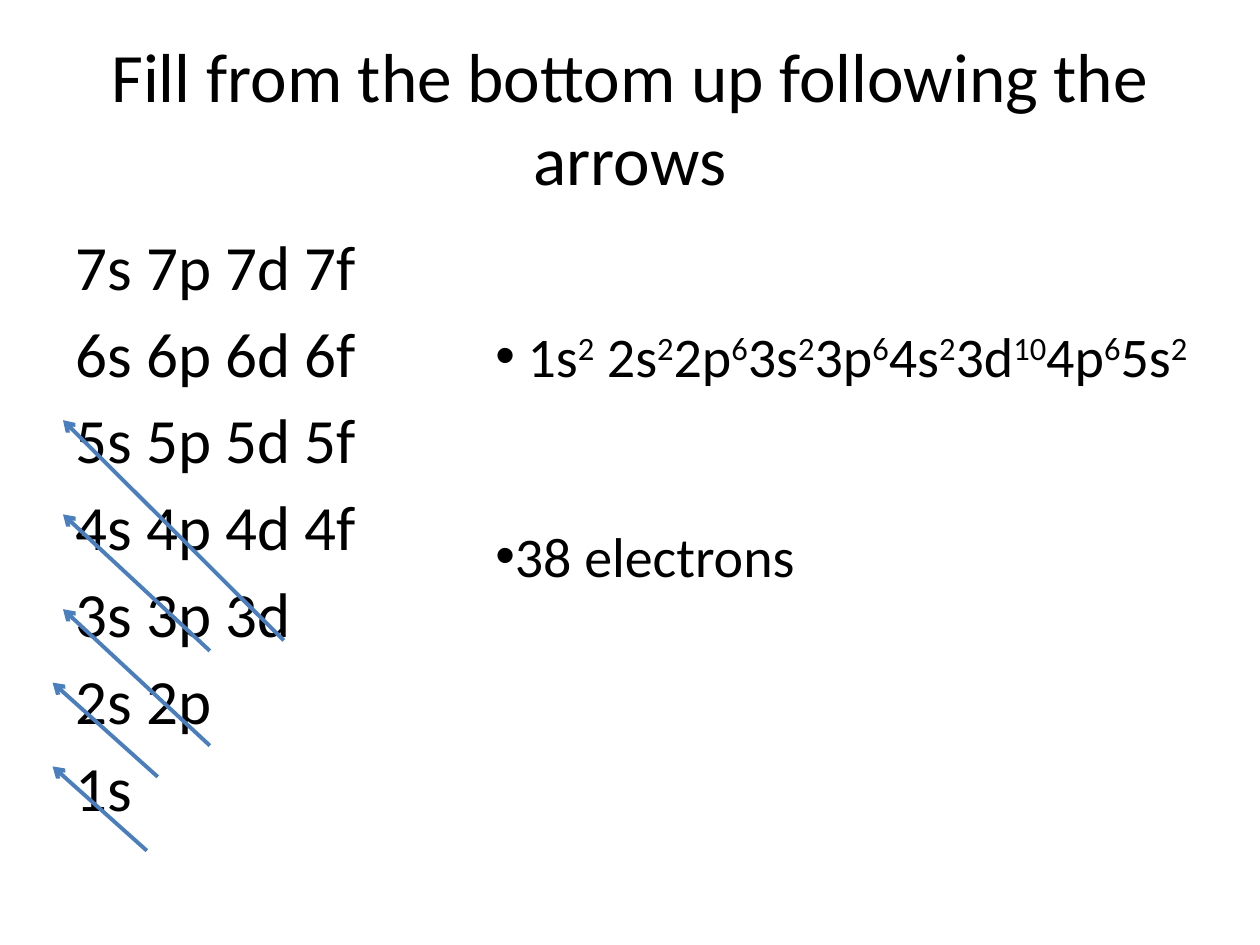
import lxml.etree
import pptx
import pptx.dml.color
import pptx.enum.shapes
import pptx.enum.text
import pptx.oxml.ns
import pptx.util
from pptx.util import Cm

BLACK = pptx.dml.color.RGBColor(0x00, 0x00, 0x00)
ARROW_BLUE = pptx.dml.color.RGBColor(0x4B, 0x7E, 0xBC)

TITLE = "Fill from the bottom up following the arrows"
ORBITALS = ["7s 7p 7d 7f", "6s 6p 6d 6f", "5s 5p 5d 5f", "4s 4p 4d 4f",
            "3s 3p 3d", "2s 2p", "1s"]
# Each subshell with its electron count
CONFIGURATION = [(" 1s", "2"), (" 2s", "2"), ("2p", "6"), ("3s", "2"),
                 ("3p", "6"), ("4s", "2"), ("3d", "10"), ("4p", "6"),
                 ("5s", "2")]
# Start x, start y, end x, end y in centimetres
FILL_ARROWS = [(2.96, 17.15, 1.06, 15.45), (3.18, 15.66, 1.06, 13.76),
               (4.23, 15.03, 1.27, 12.28), (4.23, 13.12, 1.27, 10.37),
               (5.72, 12.91, 1.27, 8.47)]


def add_element(parent, tag, **attributes):
    return lxml.etree.SubElement(parent, pptx.oxml.ns.qn(tag), attributes)


def place_frame(shape, left, top, width, height):
    """Move a placeholder and return its empty, non-shrinking text frame."""
    shape.left, shape.top = Cm(left), Cm(top)
    shape.width, shape.height = Cm(width), Cm(height)
    frame = shape.text_frame
    frame.word_wrap = True
    frame.auto_size = pptx.enum.text.MSO_AUTO_SIZE.NONE
    return frame


def add_text(paragraph, text, size, superscript=False):
    run = paragraph.add_run()
    run.text = text
    run.font.name = "Calibri"
    run.font.size = pptx.util.Pt(size)
    run.font.color.rgb = BLACK
    if superscript:
        run.font._element.set("baseline", "30000")


def add_list_paragraph(frame, is_first, space_before=0, bullet=None,
                       margin=0, indent=0):
    paragraph = frame.paragraphs[0] if is_first else frame.add_paragraph()
    paragraph.space_before = pptx.util.Pt(space_before)
    properties = paragraph._p.get_or_add_pPr()
    properties.set("marL", str(Cm(margin)))
    properties.set("indent", str(Cm(indent)))
    if bullet:
        add_element(properties, "a:buFont", typeface="Arial")
        add_element(properties, "a:buChar", char=bullet)
    else:
        add_element(properties, "a:buNone")
    return paragraph


def fill_title(shape):
    frame = place_frame(shape, 1.27, 0.76, 22.86, 3.18)
    frame.vertical_anchor = pptx.enum.text.MSO_ANCHOR.MIDDLE
    paragraph = frame.paragraphs[0]
    paragraph.alignment = pptx.enum.text.PP_ALIGN.CENTER
    add_text(paragraph, TITLE, size=39.6)


def fill_orbitals(shape):
    frame = place_frame(shape, 1.27, 4.45, 7.62, 12.57)
    for index, row in enumerate(ORBITALS):
        paragraph = add_list_paragraph(frame, index == 0, space_before=6.5,
                                       margin=0.95, indent=-0.95)
        add_text(paragraph, row, size=36)


def fill_configuration(shape):
    frame = place_frame(shape, 9.73, 6.35, 15.04, 5.74)
    paragraph = add_list_paragraph(frame, True, bullet="•")
    for subshell, electrons in CONFIGURATION:
        add_text(paragraph, subshell, size=32)
        add_text(paragraph, electrons, size=32, superscript=True)
    paragraph = add_list_paragraph(frame, False, space_before=76, bullet="•")
    add_text(paragraph, "38 electrons", size=32)


def add_arrow(slide, start_x, start_y, end_x, end_y):
    arrow = slide.shapes.add_connector(
        pptx.enum.shapes.MSO_CONNECTOR.STRAIGHT,
        Cm(start_x), Cm(start_y), Cm(end_x), Cm(end_y))
    arrow.line.color.rgb = ARROW_BLUE
    arrow.line.width = pptx.util.Pt(2.25)
    add_element(arrow.line._get_or_add_ln(), "a:tailEnd", type="arrow")
    add_element(arrow._element.spPr, "a:effectLst")


def main():
    presentation = pptx.Presentation()
    presentation.slide_width = Cm(25.4)
    presentation.slide_height = Cm(19.05)
    two_content = presentation.slide_layouts[3]
    slide = presentation.slides.add_slide(two_content)
    fill_title(slide.shapes.title)
    fill_orbitals(slide.placeholders[1])
    fill_configuration(slide.placeholders[2])
    for ends in FILL_ARROWS:
        add_arrow(slide, *ends)
    presentation.save("out.pptx")


if __name__ == "__main__":
    main()
